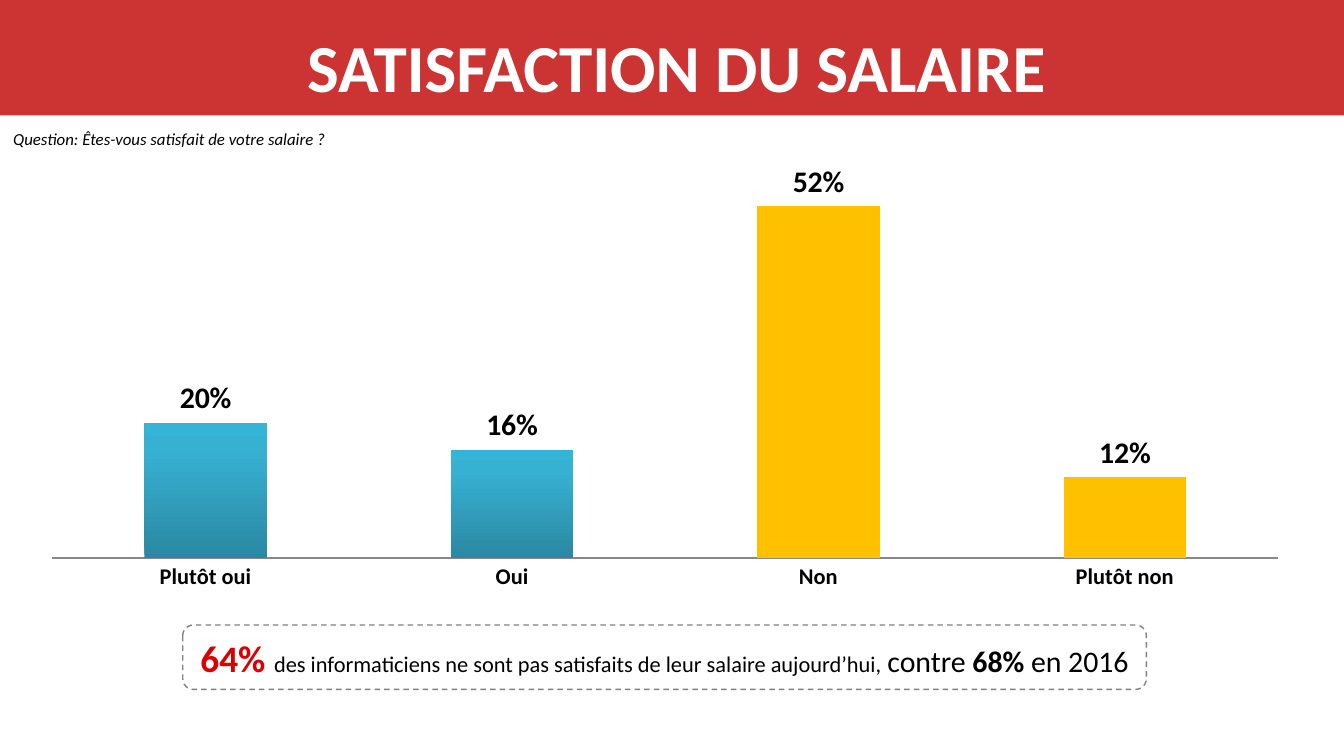
from dataclasses import dataclass

from pptx import Presentation
from pptx.chart.data import CategoryChartData
from pptx.dml.color import RGBColor
from pptx.enum.chart import XL_CHART_TYPE, XL_LABEL_POSITION, XL_TICK_LABEL_POSITION, XL_TICK_MARK
from pptx.enum.dml import MSO_LINE
from pptx.enum.shapes import MSO_SHAPE
from pptx.enum.text import MSO_ANCHOR, PP_ALIGN
from pptx.oxml import parse_xml
from pptx.oxml.ns import nsdecls
from pptx.util import Inches, Pt

COLUMNS, ROWS = 100, 56.25
CELL = Inches(0.1)
FONT = "Calibri"
COLORS = {
    "banner": "CC3333", "white": "FFFFFF", "black": "000000", "alert": "DA0000",
    "border": "808080", "axis": "888888", "no": "FFC000",
    "yes_dark": "2A88A2", "yes_mid": "37B1D2", "yes_light": "34B4D6",
}


@dataclass
class Area:
    """A block of grid cells."""
    column: float
    row: float
    columns: float
    rows: float

    def emu(self) -> list[int]:
        return [round(n * CELL) for n in (self.column, self.row, self.columns, self.rows)]


@dataclass
class Answer:
    label: str
    share: float
    positive: bool


ANSWERS = [
    Answer("Plutôt oui", 0.20, True),
    Answer("Oui", 0.16, True),
    Answer("Non", 0.52, False),
    Answer("Plutôt non", 0.12, False),
]


def color(name: str) -> RGBColor:
    return RGBColor.from_string(COLORS[name])


def style_font(font, *, size: float, ink: str = "black", bold: bool = False,
               italic: bool = False) -> None:
    font.name, font.size, font.bold, font.italic = FONT, Pt(size), bold, italic
    font.color.rgb = color(ink)


def add_span(para, text: str, **style) -> None:
    span = para.add_run()
    span.text = text
    style_font(span.font, **style)


def add_text(page, area: Area, text: str, *, align=PP_ALIGN.LEFT, **style) -> None:
    box = page.shapes.add_textbox(*area.emu())
    box.text_frame.word_wrap = True
    para = box.text_frame.paragraphs[0]
    para.alignment = align
    add_span(para, text, **style)


def add_panel(page, area: Area, preset=MSO_SHAPE.RECTANGLE):
    panel = page.shapes.add_shape(preset, *area.emu())
    panel.shadow.inherit = False
    panel.fill.background()
    panel.line.fill.background()
    return panel


def place_plot(chart, x: float, y: float, width: float, height: float) -> None:
    """Fix the inner plot as shares of the chart."""
    plot_area = chart.plots[0]._element.getparent()
    for old in plot_area.findall("{*}layout"):
        plot_area.remove(old)
    places = "".join(f'<c:{tag} val="{value}"/>' for tag, value in
                     zip("xywh", (x, y, width, height)))
    plot_area.insert(0, parse_xml(
        f'<c:layout {nsdecls("c")}><c:manualLayout><c:layoutTarget val="inner"/>'
        f'<c:xMode val="edge"/><c:yMode val="edge"/>{places}'
        '</c:manualLayout></c:layout>'))


def fill_gradient(series, stops: dict[int, str]) -> None:
    """Run a gradient from the foot of the bars to their top."""
    marks = "".join(f'<a:gs pos="{share * 1000}"><a:srgbClr val="{COLORS[name]}"/></a:gs>'
                    for share, name in stops.items())
    series._element.get_or_add_spPr().append(parse_xml(
        f'<a:gradFill {nsdecls("a")} rotWithShape="1"><a:gsLst>{marks}</a:gsLst>'
        '<a:lin ang="16200000" scaled="0"/></a:gradFill>'))


def add_answer_chart(page, area: Area, answers: list[Answer]) -> None:
    data = CategoryChartData(number_format="0%")
    data.categories = [answer.label for answer in answers]
    data.add_series("Series 1", [answer.share for answer in answers])
    chart = page.shapes.add_chart(XL_CHART_TYPE.COLUMN_CLUSTERED, *area.emu(), data).chart
    chart.has_legend = chart.has_title = False
    style_font(chart.font, size=12, bold=True)
    place_plot(chart, 0.02, 0.02, 0.96, 0.89)

    # Axes
    values = chart.value_axis
    values.minimum_scale, values.maximum_scale = 0, 0.6
    values.has_major_gridlines = values.visible = False
    values.major_tick_mark = values.minor_tick_mark = XL_TICK_MARK.NONE
    values.tick_labels.number_format = "0%"
    values.tick_labels.number_format_is_linked = False
    labels = chart.category_axis
    labels.major_tick_mark = labels.minor_tick_mark = XL_TICK_MARK.NONE
    labels.tick_label_position = XL_TICK_LABEL_POSITION.NEXT_TO_AXIS
    labels.format.line.color.rgb = color("axis")
    labels.format.line.width = Pt(0.75)
    style_font(labels.tick_labels.font, size=12, bold=True)

    # Bars and their values
    plot = chart.plots[0]
    plot.gap_width, plot.overlap, plot.vary_by_categories = 150, -25, False
    series = plot.series[0]
    series.invert_if_negative = False
    fill_gradient(series, {0: "yes_dark", 80: "yes_mid", 100: "yes_light"})
    for index, answer in enumerate(answers):
        if not answer.positive:
            fill = series.points[index].format.fill
            fill.solid()
            fill.fore_color.rgb = color("no")
    marks = series.data_labels
    marks.show_value = True
    marks.number_format, marks.number_format_is_linked = "0%", False
    marks.position = XL_LABEL_POSITION.OUTSIDE_END
    style_font(marks.font, size=16, bold=True)


def main() -> None:
    deck = Presentation()
    deck.slide_width, deck.slide_height = round(COLUMNS * CELL), round(ROWS * CELL)
    page = deck.slides.add_slide(deck.slide_layouts[6])

    # Banner
    banner = add_panel(page, Area(0, 0, COLUMNS, 8.6))
    banner.fill.solid()
    banner.fill.fore_color.rgb = color("banner")

    add_answer_chart(page, Area(2, 10.6, 95, 34), ANSWERS)

    # Title and question
    add_text(page, Area(4.3, 1.4, 92.1, 7.1), "SATISFACTION DU SALAIRE",
             align=PP_ALIGN.CENTER, size=36, ink="white", bold=True)
    add_text(page, Area(0, 9.1, 65, 2.5), "Question: Êtes-vous satisfait de votre salaire ?",
             size=9, italic=True)

    # Key finding
    finding = add_panel(page, Area(13.6, 46.5, 71.7, 4.8), MSO_SHAPE.ROUNDED_RECTANGLE)
    finding.line.color.rgb = color("border")
    finding.line.width = Pt(0.75)
    finding.line.dash_style = MSO_LINE.DASH
    frame = finding.text_frame
    frame.word_wrap = True
    frame.vertical_anchor = MSO_ANCHOR.MIDDLE
    para = frame.paragraphs[0]
    para.alignment = PP_ALIGN.CENTER
    add_span(para, "64% ", size=20, ink="alert", bold=True)
    add_span(para, "des informaticiens ne sont pas satisfaits de leur salaire aujourd’hui, ", size=12)
    add_span(para, "contre ", size=16)
    add_span(para, "68% ", size=16, bold=True)
    add_span(para, "en 2016", size=16)

    deck.save("out.pptx")


if __name__ == "__main__":
    main()
